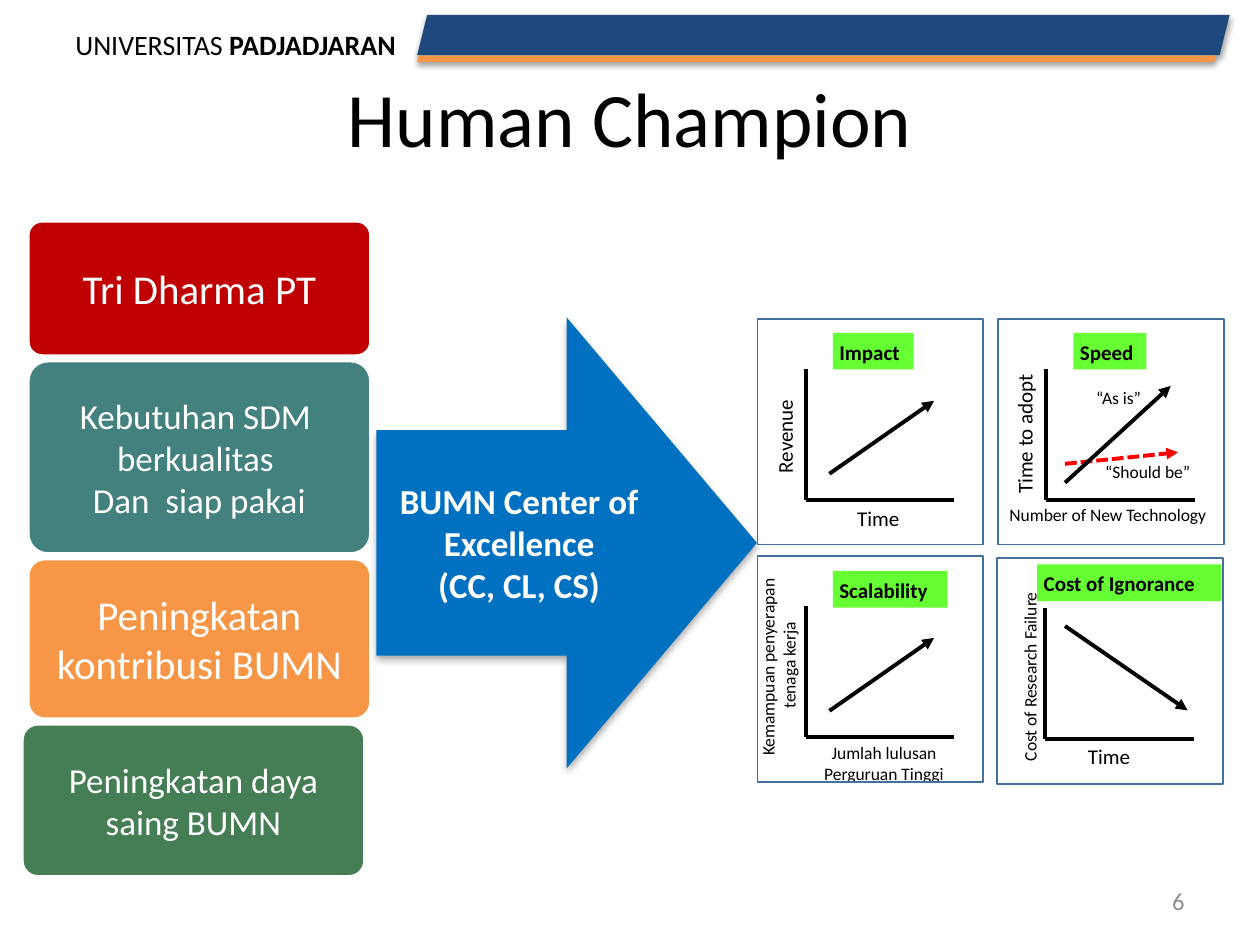
from lxml import etree
from pptx import Presentation, util as u
from pptx.dml.color import RGBColor
from pptx.enum import dml, shapes, text
from pptx.oxml import parse_xml
from pptx.oxml.ns import nsdecls, qn

COLOR = {
    "black": "000000", "white": "FFFFFF", "grey": "8C8C8C", "navy": "1F497D",
    "orange": "F79646", "blue": "0070C0", "red": "C00000", "teal": "42817E",
    "green": "457D54", "lime": "66FF33", "frame": "42719B", "signal": "FF0000",
}
FORM = shapes.MSO_SHAPE
LEFT, CENTER, RIGHT = text.PP_ALIGN.LEFT, text.PP_ALIGN.CENTER, text.PP_ALIGN.RIGHT
TOP, MIDDLE = text.MSO_ANCHOR.TOP, text.MSO_ANCHOR.MIDDLE

deck = Presentation()
deck.slide_width, deck.slide_height = u.Cm(25.4), u.Cm(19.05)
slide = deck.slides.add_slide(deck.slide_layouts[6])


def block(at, wording="", form=None, fill=None, edge=None, shade=None, size=12, color="black",
          bold=False, align=LEFT, anchor=TOP, inset=0.13, wrap=False, turn=0):
    """Add a shape, or a text box when no form is given; wording is lines of text."""
    at = [u.Cm(length) for length in at]
    if form is None:
        part = slide.shapes.add_textbox(*at)
    else:
        part = slide.shapes.add_shape(form, *at)
        part.shadow.inherit = False
        if fill:
            part.fill.solid()
            part.fill.fore_color.rgb = RGBColor.from_string(COLOR[fill])
        else:
            part.fill.background()
        if edge:
            part.line.width = u.Pt(1)
            part.line.color.rgb = RGBColor.from_string(COLOR[edge])
        else:
            part.line.fill.background()
    if shade:
        blur, distance, opacity = shade
        part._element.spPr.find(qn("a:effectLst")).append(parse_xml(
            f'<a:outerShdw {nsdecls("a")} blurRad="{u.Pt(blur)}" dist="{u.Pt(distance)}" '
            f'dir="5400000" rotWithShape="0"><a:srgbClr val="{COLOR["black"]}">'
            f'<a:alpha val="{opacity * 1000}"/></a:srgbClr></a:outerShdw>'))
    part.rotation = turn
    frame = part.text_frame
    frame_format = {"word_wrap": wrap, "vertical_anchor": anchor}
    frame_format.update({f"margin_{side}": u.Cm(inset)
                         for side in ("left", "top", "right", "bottom")})
    for name, value in frame_format.items():
        setattr(frame, name, value)
    frame.text = wording
    for paragraph in frame.paragraphs:
        paragraph.alignment = align
        for run in paragraph.runs:
            for name, value in {"name": "Calibri", "size": u.Pt(size), "bold": bold}.items():
                setattr(run.font, name, value)
            run.font.color.rgb = RGBColor.from_string(COLOR[color])
    return part


def stroke(x1, y1, x2, y2, color="black", arrow=False, dotted=False):
    """Add a straight line, with an arrowhead at its end if asked."""
    line = slide.shapes.add_connector(shapes.MSO_CONNECTOR.STRAIGHT,
                                      *(u.Cm(v) for v in (x1, y1, x2, y2)))
    line.line.width = u.Pt(2.25)
    line.line.color.rgb = RGBColor.from_string(COLOR[color])
    if dotted:
        line.line.dash_style = dml.MSO_LINE.SQUARE_DOT
    if arrow:
        etree.SubElement(line.line._get_or_add_ln(), qn("a:tailEnd"), type="triangle")
    etree.SubElement(line._element.spPr, qn("a:effectLst"))


# Header band
university = block((1.27, 0.3, 7.19, 1.7), "UNIVERSITAS ", size=16, inset=0.25)
name_run = university.text_frame.paragraphs[0].add_run()
name_run.text = "PADJADJARAN"
for name, value in {"name": "Calibri", "size": u.Pt(16), "bold": True}.items():
    setattr(name_run.font, name, value)
name_run.font.color.rgb = RGBColor.from_string(COLOR["black"])
for at, fill in (((8.41, 0.3, 16.38, 0.81), "navy"), ((8.41, 1.12, 16.1, 0.13), "orange")):
    block(at, form=FORM.PARALLELOGRAM, fill=fill, shade=(3.1, 1.8, 35))

# Title
block((1.27, 0.76, 22.86, 3.18), "Human Champion", size=44, align=CENTER, anchor=MIDDLE, wrap=True)

# Centre of excellence arrow
block((7.59, 6.4, 7.67, 9.09), "BUMN Center of Excellence\n(CC, CL, CS)", FORM.RIGHT_ARROW,
      "blue", shade=(4, 2.2, 32), size=20, color="white", bold=True,
      align=CENTER, anchor=MIDDLE, wrap=True)

# Input cards: left, top, height, fill, size, wording
cards = [
    (0.58, 4.47, 2.69, "red", 23.4, "Tri Dharma PT"),
    (0.58, 7.29, 3.86, "teal", 20, "Kebutuhan SDM  berkualitas \nDan  siap pakai"),
    (0.58, 11.28, 3.2, "orange", 23.4, "Peningkatan kontribusi BUMN"),
    (0.46, 14.61, 3.05, "green", 20, "Peningkatan daya saing BUMN"),
]
for left, top, height, fill, size, wording in cards:
    card = block((left, top, 6.88, height), wording, FORM.ROUNDED_RECTANGLE, fill, "white",
                 size=size, color="white", align=CENTER, anchor=MIDDLE, wrap=True)
    card.adjustments[0] = 0.1

# Outcome panels: places inside a panel are measured from its corner
rising = (1.45, 3.12, 3.56, 1.65, "black")
panels = [
    {"corner": (15.27, 6.43), "tag": ("Impact", 1.52, 0.28, 1.63), "trends": [rising],
     "labels": [("Time", 12, 0, (1.88, 3.63, 1.22, 0.74)),
                ("Revenue", 12, 270, (-0.41, 1.93, 1.88, 0.74))]},
    {"corner": (20.12, 6.43), "tag": ("Speed", 1.52, 0.28, 1.47),
     "trends": [(1.35, 2.92, 3.63, 2.69, "signal"), (1.35, 3.3, 3.48, 1.35, "black")],
     "labels": [("Number of New Technology", 10, 0, (0.1, 3.61, 4.6, 0.64)),
                ("Time to adopt", 12, 270, (-0.97, 1.8, 2.97, 0.74)),
                ("“As is”", 10, 0, (1.85, 1.24, 1.37, 0.64)),
                ("“Should be”", 10, 0, (2.03, 2.74, 2.21, 0.64))]},
    {"corner": (15.27, 11.21), "tag": ("Scalability", 1.52, 0.3, 2.31), "trends": [rising],
     "labels": [("Kemampuan penyerapan \ntenaga kerja", 10, 270, (-1.8, 1.68, 4.37, 1.04)),
                ("Jumlah lulusan\nPerguruan Tinggi", 10, 0, (1.09, 3.61, 2.92, 1.04))]},
    {"corner": (20.1, 11.25), "tag": ("Cost of Ignorance", 0.81, 0.13, 3.71),
     "trends": [(1.37, 1.37, 3.84, 3.07, "black")],
     "labels": [("Cost of Research Failure", 10, 270, (-1.42, 1.85, 4.11, 0.64)),
                ("Time", 12, 0, (1.7, 3.61, 1.22, 0.74))]},
]
for panel in panels:
    x, y = panel["corner"]
    stroke(x + 0.97, y + 1, x + 0.97, y + 3.65)
    stroke(x + 0.97, y + 3.65, x + 3.96, y + 3.65)
    for x1, y1, x2, y2, color in panel["trends"]:
        stroke(x + x1, y + y1, x + x2, y + y2, color, arrow=True, dotted=color == "signal")
    wording, dx, dy, width = panel["tag"]
    block((x + dx, y + dy, width, 0.74), wording, FORM.RECTANGLE, "lime", bold=True)
    for wording, size, turn, (dx, dy, width, height) in panel["labels"]:
        block((x + dx, y + dy, width, height), wording, size=size, turn=turn,
              align=CENTER if "\n" in wording else LEFT)
    block((x, y, 4.55, 4.55), form=FORM.RECTANGLE, edge="frame")

# Slide number
block((18.21, 17.65, 5.92, 1.02), "6", size=14, color="grey", align=RIGHT, anchor=MIDDLE,
      inset=0.25, wrap=True)

deck.save("out.pptx")
